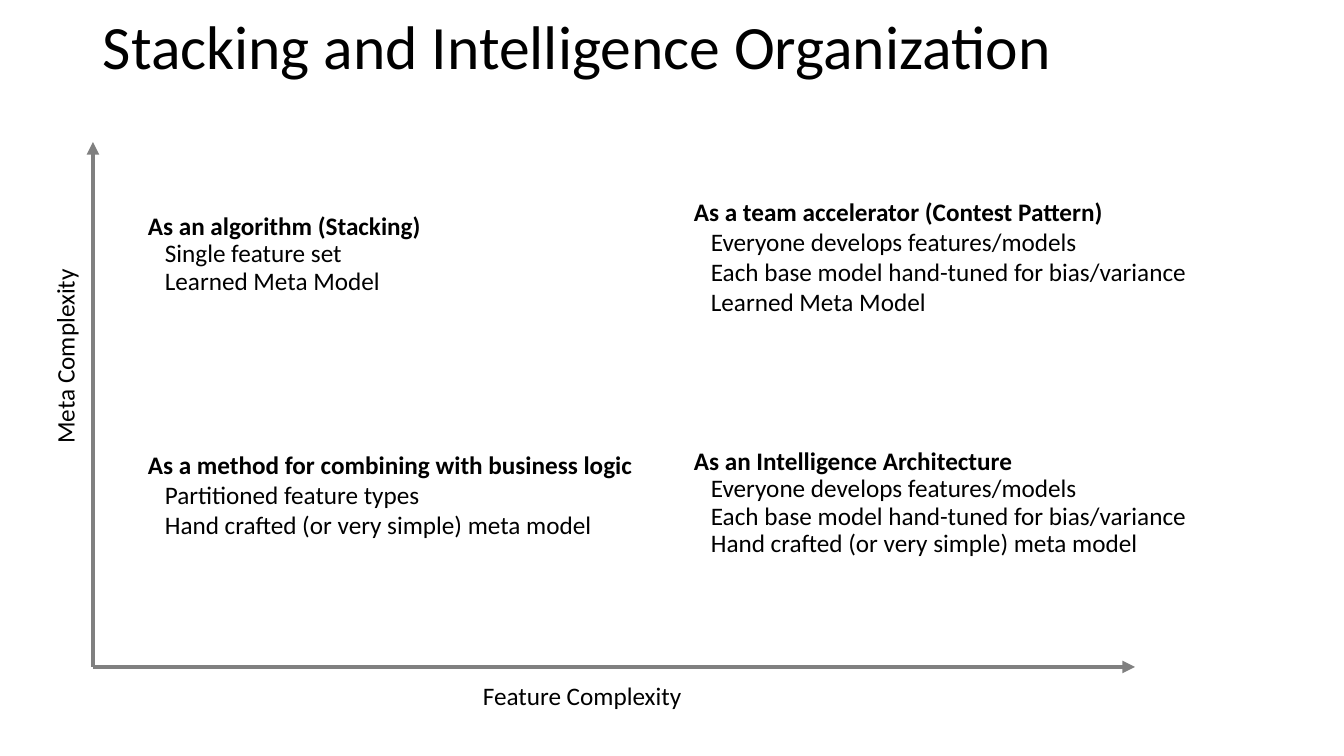
"""Build a slide that places four uses of stacking on two complexity axes."""
from lxml.etree import SubElement
from pptx import Presentation
from pptx.dml.color import RGBColor
from pptx.enum.shapes import MSO_CONNECTOR as Connector
from pptx.enum.text import MSO_ANCHOR as Anchor
from pptx.oxml.ns import qn
from pptx.util import Emu, Pt

EMU_PER_PX = 12192000 / 1344
BLACK = RGBColor(0x00, 0x00, 0x00)
GRAY = RGBColor(0x80, 0x80, 0x80)
FONT = "Calibri"
BODY_SIZE = 18
INDENT = 17

TITLE = ("Stacking and Intelligence Organization", (93, -23, 1159, 146))
QUADRANTS = [
    ("As an algorithm (Stacking)",
     ["Single feature set", "Learned Meta Model"],
     (138, 209, 361, 124), 0.9),
    ("As a team accelerator (Contest Pattern)",
     ["Everyone develops features/models",
      "Each base model hand-tuned for bias/variance",
      "Learned Meta Model"],
     (684, 191, 537, 132), 1.0),
    ("As a method for combining with business logic",
     ["Partitioned feature types",
      "Hand crafted (or very simple) meta model"],
     (138, 444, 546, 102), 1.0),
    ("As an Intelligence Architecture",
     ["Everyone develops features/models",
      "Each base model hand-tuned for bias/variance",
      "Hand crafted (or very simple) meta model"],
     (684, 444, 522, 135), 0.9),
]
ORIGIN = (93, 667)
AXES = [
    ("Feature Complexity", (1135, 667), (473, 675, 221, 40), 0),
    ("Meta Complexity", (93, 142), (-34, 335, 197, 40), 270),
]


def px(length):
    """Turn px into EMU."""
    return Emu(round(length * EMU_PER_PX))


def add_text(page, lines, place, size=BODY_SIZE, spacing=1.0, wrap=True):
    """Add a text box from (text, bold, indent) lines."""
    box = page.shapes.add_textbox(*map(px, place))
    frame = box.text_frame
    frame.word_wrap = wrap
    for index, (text, bold, indent) in enumerate(lines):
        para = frame.add_paragraph() if index else frame.paragraphs[0]
        para.line_spacing = spacing
        if indent:
            para._p.get_or_add_pPr().set("marL", str(px(indent)))
        span = para.add_run()
        span.text = text
        span.font.name = FONT
        span.font.size = Pt(size)
        span.font.bold = bold
        span.font.color.rgb = BLACK
    return box


def add_axis(page, end):
    """Draw an arrow from the shared origin."""
    axis = page.shapes.add_connector(Connector.STRAIGHT, *map(px, ORIGIN + end))
    axis.line.color.rgb = GRAY
    axis.line.width = Pt(3)
    SubElement(axis.line._get_or_add_ln(), qn("a:tailEnd"), type="triangle")
    SubElement(axis._element.spPr, qn("a:effectLst"))


def main():
    """Assemble and save the deck."""
    deck = Presentation()
    deck.slide_width, deck.slide_height = px(1344), px(756)
    page = deck.slides.add_slide(deck.slide_layouts[6])

    title, place = TITLE
    box = add_text(page, [(title, False, 0)], place, size=44, spacing=0.9)
    box.text_frame.vertical_anchor = Anchor.MIDDLE

    for label, end, place, rotation in AXES:
        add_axis(page, end)
        box = add_text(page, [(label, False, 0)], place, wrap=False)
        box.rotation = rotation

    for heading, points, place, spacing in QUADRANTS:
        lines = [(heading, True, 0)] + [(point, False, INDENT) for point in points]
        add_text(page, lines, place, spacing=spacing)

    deck.save("out.pptx")


if __name__ == "__main__":
    main()
